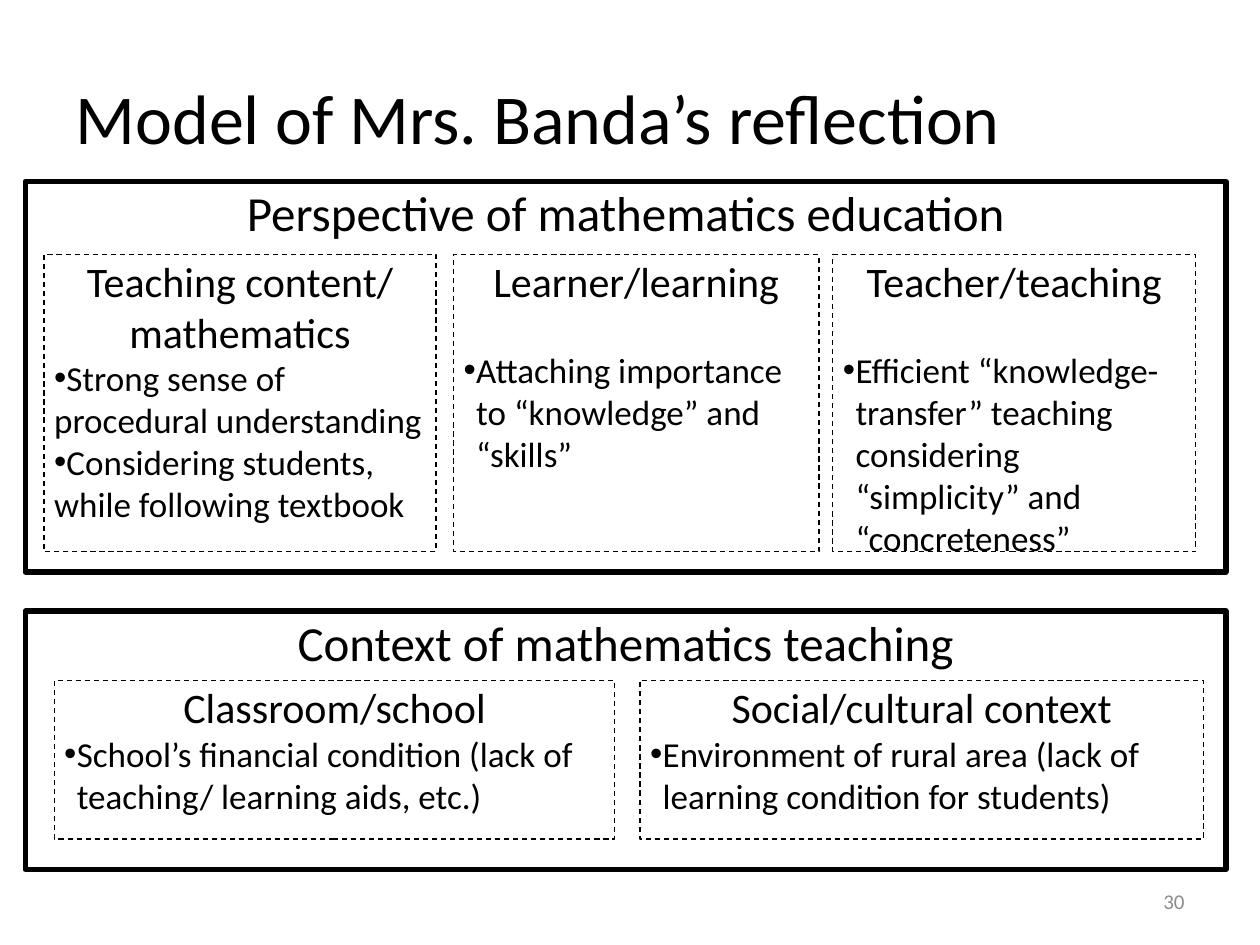
from lxml import etree
from pptx import Presentation
from pptx.dml.color import RGBColor
from pptx.enum import dml, shapes, text
from pptx.oxml.ns import qn
from pptx.util import Inches, Pt

LEFT, CENTER, RIGHT = text.PP_ALIGN.LEFT, text.PP_ALIGN.CENTER, text.PP_ALIGN.RIGHT


def write(paragraph, words, size, alignment, color="000000"):
    paragraph.alignment = alignment
    run = paragraph.add_run()
    run.text = words
    for name, value in {"name": "Calibri", "size": Pt(size)}.items():
        setattr(run.font, name, value)
    run.font.color.rgb = RGBColor.from_string(color)


def add_box(left, top, width, height, headings, size, line_width, dashed=False):
    """Add a white box with centred headings and return its text frame."""
    box = slide.shapes.add_shape(
        shapes.MSO_SHAPE.RECTANGLE,
        Inches(left), Inches(top), Inches(width), Inches(height))
    box.shadow.inherit = False
    box.fill.solid()
    box.fill.fore_color.rgb = RGBColor.from_string("FFFFFF")
    box.line.color.rgb = RGBColor.from_string("000000")
    box.line.width = Pt(line_width)
    if dashed:
        box.line.dash_style = dml.MSO_LINE.DASH
    frame = box.text_frame
    frame_format = {
        "word_wrap": True, "vertical_anchor": text.MSO_ANCHOR.TOP,
        "margin_left": Inches(0.08), "margin_right": Inches(0.08),
        "margin_top": Inches(0.01), "margin_bottom": Inches(0.01),
    }
    for name, value in frame_format.items():
        setattr(frame, name, value)
    for index, heading in enumerate(headings):
        paragraph = frame.add_paragraph() if index else frame.paragraphs[0]
        write(paragraph, heading, size, CENTER)
    return frame


presentation = Presentation()
presentation.slide_width, presentation.slide_height = Inches(10), Inches(7.5)
slide = presentation.slides.add_slide(presentation.slide_layouts[5])

title = slide.shapes.title
title_format = {"left": 0.5, "top": 0.3, "width": 9, "height": 1.25}
for name, value in title_format.items():
    setattr(title, name, Inches(value))
title.text_frame.vertical_anchor = text.MSO_ANCHOR.MIDDLE
write(title.text_frame.paragraphs[0], "Model of Mrs. Banda’s reflection", 40, LEFT)

number = slide.shapes.add_textbox(
    Inches(7.17), Inches(6.95), Inches(2.33), Inches(0.4)).text_frame
number.word_wrap = True
number.vertical_anchor = text.MSO_ANCHOR.MIDDLE
write(number.paragraphs[0], "30", 12, RIGHT, "8C8C8C")

# Section: heading, top, height, top and height of its topics, topics.
# Topic: left, width, headings, bullets, hanging indent, points before the bullets.
sections = [
    ("Perspective of mathematics education", 1.44, 3.1, 2.02, 2.36, [
        (0.35, 3.11, ["Teaching content/", "mathematics"],
         ["Strong sense of procedural understanding",
          "Considering students, while following textbook"], 0, 0),
        (3.6, 2.9, ["Learner/learning"],
         ["Attaching importance to “knowledge” and “skills”"], 0.1, 24),
        (6.61, 2.88, ["Teacher/teaching"],
         ["Efficient “knowledge-transfer” teaching considering "
          "“simplicity” and “concreteness”"], 0.1, 24),
    ]),
    ("Context of mathematics teaching", 4.85, 2.05, 5.4, 1.26, [
        (0.43, 4.45, ["Classroom/school"],
         ["School’s financial condition (lack of teaching/ learning aids, etc.)"],
         0.1, 0),
        (5.08, 4.47, ["Social/cultural context"],
         ["Environment of rural area (lack of learning condition for students)"],
         0.1, 0),
    ]),
]

for heading, top, height, topic_top, topic_height, topics in sections:
    add_box(0.2, top, 9.53, height, [heading], 28, 3)
    for left, width, headings, bullets, hanging, gap in topics:
        frame = add_box(left, topic_top, width, topic_height, headings, 24, 0.75, True)
        for index, bullet in enumerate(bullets):
            paragraph = frame.add_paragraph()
            write(paragraph, bullet, 20, LEFT)
            paragraph.level = 1
            paragraph.space_before = Pt(0 if index else gap)
            properties = paragraph._p.get_or_add_pPr()
            properties.set("marL", str(Inches(hanging)))
            properties.set("indent", str(-Inches(hanging)))
            etree.SubElement(properties, qn("a:buFont"), typeface="Arial")
            etree.SubElement(properties, qn("a:buChar"), char="•")

presentation.save("out.pptx")
